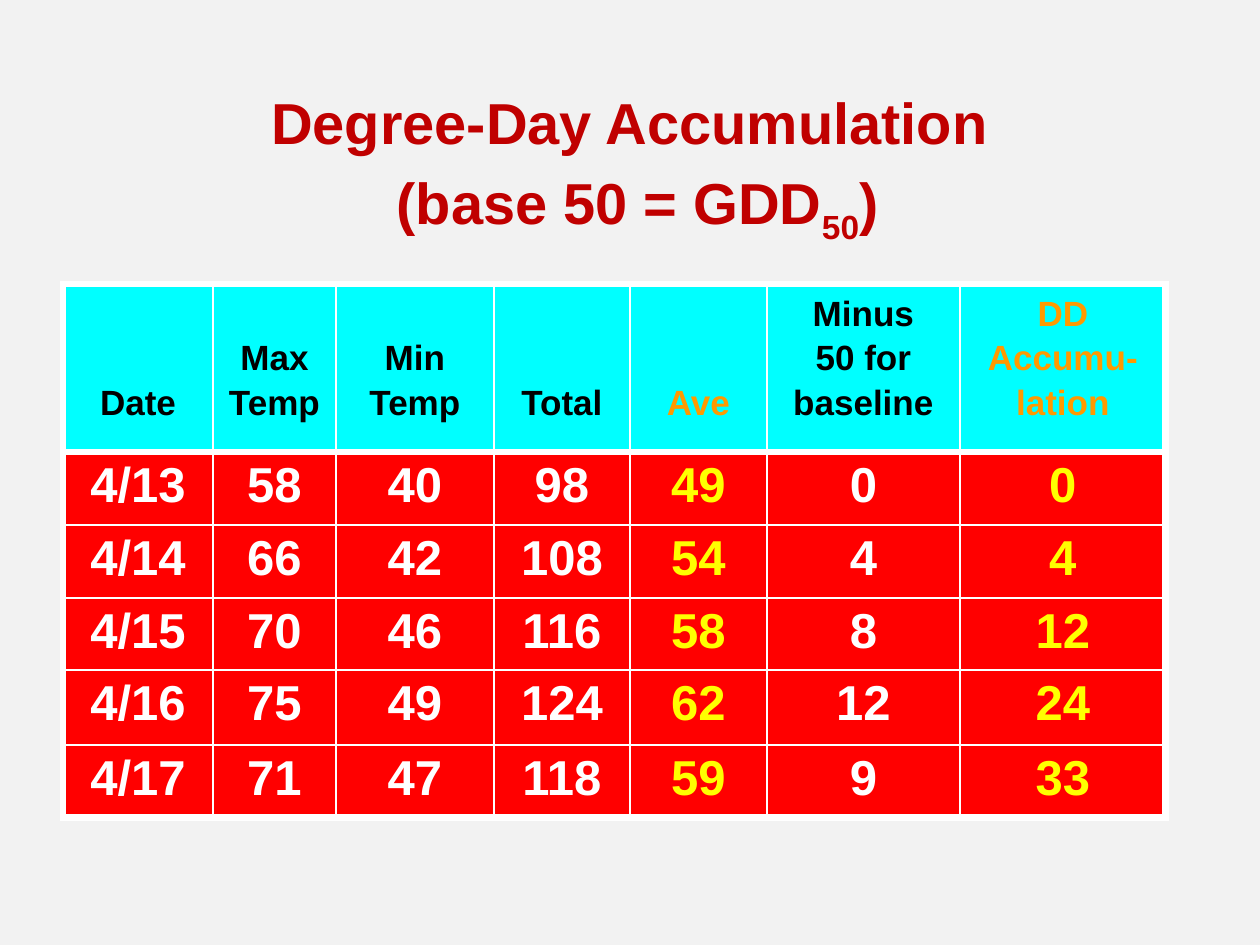
from lxml.etree import SubElement
from pptx import Presentation
from pptx.dml.color import RGBColor
from pptx.enum.text import MSO_ANCHOR as Anchor, MSO_AUTO_SIZE as AutoSize, PP_ALIGN as Align
from pptx.oxml.ns import qn
from pptx.util import Pt

SCALE = 914400 / 126
FONT = "Arial"
WHITE, BLACK, YELLOW, ORANGE = "FFFFFF", "000000", "FFFF00", "FF9900"
CYAN, RED, DARK_RED, PALE_GRAY = "00FFFF", "FF0000", "C00000", "F2F2F2"
THICK, THIN = Pt(4.5), Pt(1)

TITLE = [
    [("Degree-Day Accumulation", 0)],
    [(" (base 50 = GDD", 0), ("50", -25000), (")", 0)],
]
HEADERS = [
    ["Date"], ["Max", "Temp"], ["Min", "Temp"], ["Total"], ["Ave"],
    ["Minus", "50 for", "baseline"], ["DD", "Accumu-", "lation"],
]
READINGS = [
    ["4/13", "58", "40", "98", "49", "0", "0"],
    ["4/14", "66", "42", "108", "54", "4", "4"],
    ["4/15", "70", "46", "116", "58", "8", "12"],
    ["4/16", "75", "49", "124", "62", "12", "24"],
    ["4/17", "71", "47", "118", "59", "9", "33"],
]
HIGHLIGHTED = {HEADERS.index(["Ave"]), len(HEADERS) - 1}
COLUMN_WIDTHS = [150, 123, 158, 136, 137, 193, 206]
ROW_HEIGHTS = [168, 73, 73, 72, 75, 73]


def px(length):
    """Turn pixels into EMU."""
    return round(length * SCALE)


def color(value):
    """Turn a hex string into a colour."""
    return RGBColor.from_string(value)


def add_span(para, text, size, hex_color, baseline=0):
    """Add one bold run to a paragraph."""
    span = para.add_run()
    span.text = text
    span.font.name, span.font.size, span.font.bold = FONT, Pt(size), True
    span.font.color.rgb = color(hex_color)
    if baseline:
        span.font._element.set("baseline", str(baseline))


def write_lines(frame, lines, size, gap):
    """Write centred paragraphs of (text, colour, baseline) spans."""
    for index, spans in enumerate(lines):
        para = frame.add_paragraph() if index else frame.paragraphs[0]
        para.alignment = Align.CENTER
        para.space_before = Pt(gap if index else 0)
        for text, hex_color, baseline in spans:
            add_span(para, text, size, hex_color, baseline)


def set_borders(cell, widths):
    """Draw white left, right, top and bottom cell borders."""
    properties = cell._tc.get_or_add_tcPr()
    for side, width in zip("LRTB", widths):
        line = SubElement(properties, qn(f"a:ln{side}"), w=str(width))
        fill = SubElement(line, qn("a:solidFill"))
        SubElement(fill, qn("a:srgbClr"), val=WHITE)


def add_title(slide):
    """Place and fill the slide title."""
    box = slide.shapes.title
    box.left, box.top, box.width, box.height = map(px, (73, 76, 1113, 164))
    frame = box.text_frame
    frame.word_wrap, frame.auto_size = True, AutoSize.NONE
    frame.vertical_anchor, frame.margin_top = Anchor.TOP, px(11)
    lines = [[(text, DARK_RED, base) for text, base in spans] for spans in TITLE]
    write_lines(frame, lines, 33, 6)


def fill_cell(cell, lines, row, column):
    """Style and write one table cell."""
    is_header, marked = row == 0, column in HIGHLIGHTED
    set_borders(cell, [
        THICK if column == 0 else THIN,
        THICK if column == len(COLUMN_WIDTHS) - 1 else THIN,
        THICK if row <= 1 else THIN,
        THICK if row in (0, len(READINGS)) else THIN,
    ])
    cell.fill.solid()
    cell.fill.fore_color.rgb = color(CYAN if is_header else RED)
    if is_header:
        cell.vertical_anchor, cell.margin_bottom = Anchor.BOTTOM, px(29)
        size, ink = 20, ORANGE if marked else BLACK
    else:
        cell.vertical_anchor = Anchor.TOP
        size, ink = 28, YELLOW if marked else WHITE
    write_lines(cell.text_frame, [[(text, ink, 0)] for text in lines], size, 3.3)


def add_readings(slide):
    """Add the degree-day table."""
    rows = [HEADERS] + [[[value] for value in reading] for reading in READINGS]
    size = sum(COLUMN_WIDTHS), sum(ROW_HEIGHTS)
    frame = slide.shapes.add_table(len(rows), len(HEADERS), *map(px, (63, 284, *size)))
    table = frame.table
    table.first_row = table.horz_banding = False
    for column, width in zip(table.columns, COLUMN_WIDTHS):
        column.width = px(width)
    for row, (height, cells) in enumerate(zip(ROW_HEIGHTS, rows)):
        table.rows[row].height = px(height)
        for column, lines in enumerate(cells):
            fill_cell(table.cell(row, column), lines, row, column)


def main():
    """Build and save the deck."""
    deck = Presentation()
    deck.slide_width, deck.slide_height = px(1260), px(945)
    slide = deck.slides.add_slide(deck.slide_layouts[5])
    slide.background.fill.solid()
    slide.background.fill.fore_color.rgb = color(PALE_GRAY)
    add_title(slide)
    add_readings(slide)
    deck.save("out.pptx")


if __name__ == "__main__":
    main()
